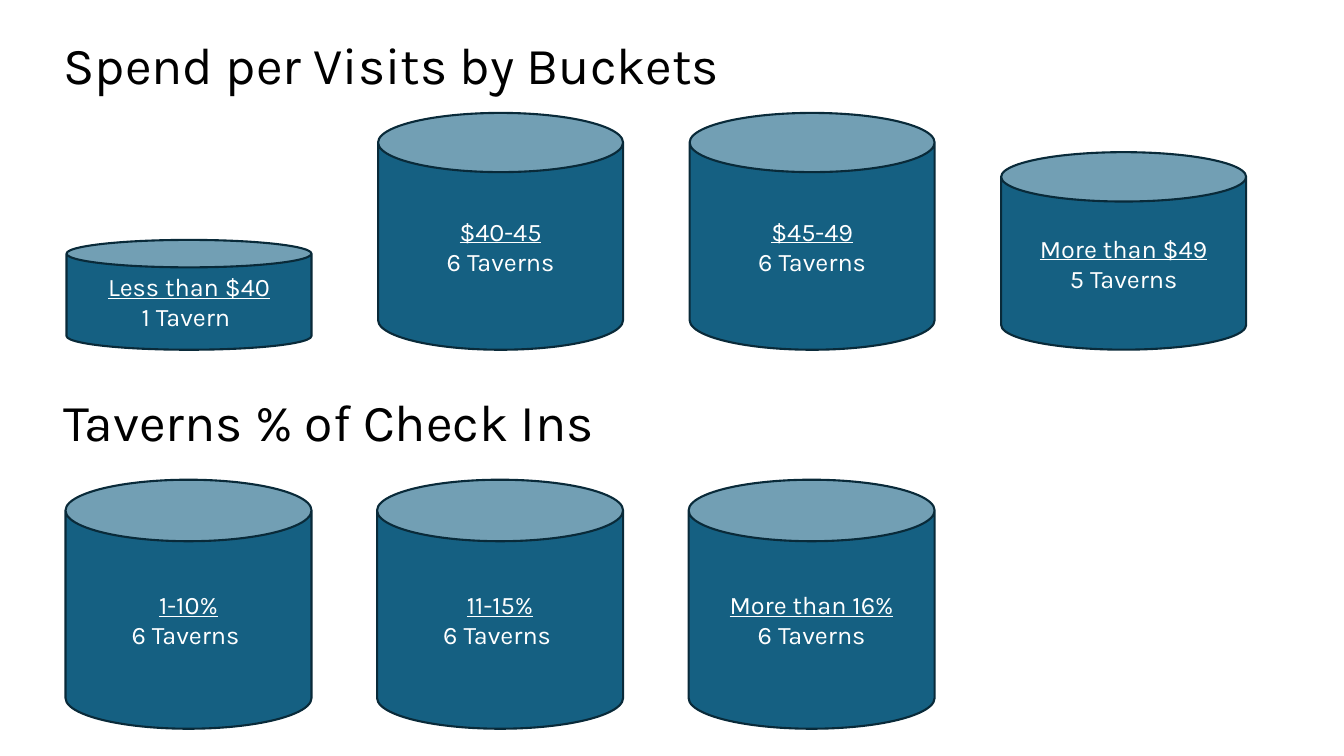
from dataclasses import dataclass

from pptx import Presentation
from pptx import util as u
from pptx.dml.color import RGBColor
from pptx.enum import shapes, text


@dataclass(frozen=True)
class Theme:
    """Colours, typeface and type sizes of the slide."""
    font: str = "Karla"
    ink: str = "000000"
    fill: str = "156082"
    line: str = "092A39"
    label: str = "FFFFFF"
    heading_size: int = 37
    label_size: int = 18
    line_width: float = 1.5


THEME = Theme()
SLIDE_WIDTH, SLIDE_HEIGHT = 13.33, 7.5
COLUMN_PITCH = 3.09
HEADING_LEFT, HEADING_WIDTH, HEADING_HEIGHT = 0.53, 11.93, 0.63

SPEND_BUCKETS = [
    ("Less than $40", "1 Tavern ", 1.09),
    ("$40-45", "6 Taverns", 2.35),
    ("$45-49", "6 Taverns", 2.35),
    ("More than $49", "5 Taverns", 1.96),
]
CHECK_IN_BUCKETS = [
    ("1-10%", "6 Taverns ", 2.47),
    ("11-15%", "6 Taverns ", 2.47),
    ("More than 16%", "6 Taverns", 2.47),
]


def set_format(target, values):
    """Set each named attribute on the target."""
    for name, value in values.items():
        setattr(target, name, value)


def set_font(font, size, color, underline=False):
    """Give a font the theme typeface, a size and a colour."""
    set_format(font, {"name": THEME.font, "size": u.Pt(size), "bold": False,
                      "underline": underline})
    font.color.rgb = RGBColor.from_string(color)


def fill_heading(shape, words, top, line_spacing):
    """Place a heading across the slide and write its words."""
    set_format(shape, {"left": u.Inches(HEADING_LEFT), "top": u.Inches(top),
                       "width": u.Inches(HEADING_WIDTH),
                       "height": u.Inches(HEADING_HEIGHT)})
    frame = shape.text_frame
    set_format(frame, {"text": words, "word_wrap": True,
                       "auto_size": text.MSO_AUTO_SIZE.NONE,
                       "vertical_anchor": text.MSO_ANCHOR.MIDDLE})
    paragraph = frame.paragraphs[0]
    set_format(paragraph, {"alignment": text.PP_ALIGN.LEFT,
                           "line_spacing": line_spacing,
                           "space_before": u.Pt(0), "space_after": u.Pt(6)})
    set_font(paragraph.runs[0].font, THEME.heading_size, THEME.ink)


def add_bucket(slide, box, bucket_range, count):
    """Draw one can in its box, with an underlined range above its count."""
    shape = slide.shapes.add_shape(shapes.MSO_SHAPE.CAN, *map(u.Inches, box))
    shape.shadow.inherit = False
    shape.fill.solid()
    shape.fill.fore_color.rgb = RGBColor.from_string(THEME.fill)
    shape.line.color.rgb = RGBColor.from_string(THEME.line)
    shape.line.width = u.Pt(THEME.line_width)
    frame = shape.text_frame
    set_format(frame, {"text": f"{bucket_range}\n{count}", "word_wrap": True,
                       "vertical_anchor": text.MSO_ANCHOR.MIDDLE})
    for paragraph, underline in zip(frame.paragraphs, (True, False)):
        paragraph.alignment = text.PP_ALIGN.CENTER
        set_font(paragraph.runs[0].font, THEME.label_size, THEME.label, underline)


def add_bucket_row(slide, buckets, left, bottom, width):
    """Stand a row of cans on a common base line, one per column."""
    for column, (bucket_range, count, height) in enumerate(buckets):
        box = (left + column * COLUMN_PITCH, bottom - height, width, height)
        add_bucket(slide, box, bucket_range, count)


def main():
    """Build the slide and save it."""
    presentation = Presentation()
    set_format(presentation, {"slide_width": u.Inches(SLIDE_WIDTH),
                              "slide_height": u.Inches(SLIDE_HEIGHT)})
    slide = presentation.slides.add_slide(presentation.slide_layouts[5])
    fill_heading(slide.shapes.title, "Spend per Visits by Buckets", 0.38, 0.8)
    add_bucket_row(slide, SPEND_BUCKETS, left=0.66, bottom=3.47, width=2.43)
    second_heading = slide.shapes.add_textbox(0, 0, 0, 0)
    fill_heading(second_heading, "Taverns % of Check Ins", 3.9, 0.9)
    add_bucket_row(slide, CHECK_IN_BUCKETS, left=0.65, bottom=7.23, width=2.44)
    presentation.save("out.pptx")


if __name__ == "__main__":
    main()
